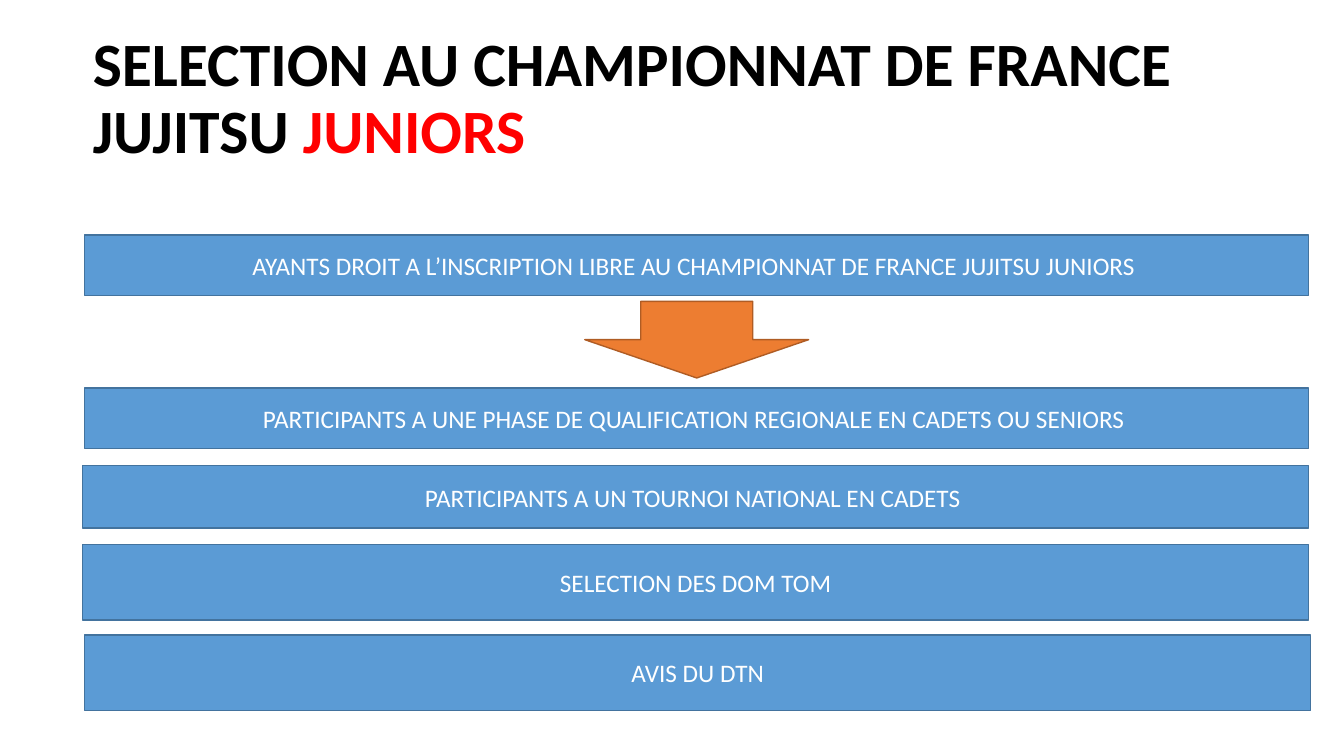
from dataclasses import dataclass

from pptx import Presentation
from pptx.dml.color import RGBColor
from pptx.enum.shapes import MSO_SHAPE
from pptx.enum.text import MSO_ANCHOR, MSO_AUTO_SIZE, PP_ALIGN
from pptx.util import Inches, Pt

RECTANGLE = MSO_SHAPE.RECTANGLE
RIGHT_ARROW = MSO_SHAPE.RIGHT_ARROW
MIDDLE = MSO_ANCHOR.MIDDLE
NO_AUTOFIT = MSO_AUTO_SIZE.NONE
LEFT = PP_ALIGN.LEFT
CENTER = PP_ALIGN.CENTER


@dataclass(frozen=True)
class Theme:
    font: str = "Calibri"
    title_size: int = 44
    bar_size: int = 18
    line_width: int = 1
    black: str = "000000"
    red: str = "FF0000"
    white: str = "FFFFFF"
    blue: str = "5B9BD5"
    blue_line: str = "43739E"
    orange: str = "ED7D31"
    orange_line: str = "AF5C24"


theme = Theme()


def add_block(page, kind, bounds, fill, line):
    block = page.shapes.add_shape(kind, *[Inches(length) for length in bounds])
    block.shadow.inherit = False
    block.fill.solid()
    block.fill.fore_color.rgb = RGBColor.from_string(fill)
    block.line.color.rgb = RGBColor.from_string(line)
    block.line.width = Pt(theme.line_width)
    return block


def style_span(span, size, color, bold=False):
    span.font.name = theme.font
    span.font.size = Pt(size)
    span.font.bold = bold
    span.font.color.rgb = RGBColor.from_string(color)


deck = Presentation()
deck.slide_width = Inches(13.33)
deck.slide_height = Inches(7.5)
page = deck.slides.add_slide(deck.slide_layouts[5])

title = page.shapes.title
title.left, title.top = Inches(0.82), Inches(0.27)
title.width, title.height = Inches(11.5), Inches(1.45)
title.text_frame.auto_size = NO_AUTOFIT
title.text_frame.word_wrap = True
title.text_frame.vertical_anchor = MIDDLE
para = title.text_frame.paragraphs[0]
para.alignment = LEFT
para.line_spacing = 0.9
for text, color in [
    ("SELECTION AU CHAMPIONNAT DE FRANCE JUJITSU ", theme.black),
    ("JUNIORS", theme.red),
]:
    span = para.add_run()
    span.text = text
    style_span(span, theme.title_size, color, bold=True)

bars = [
    ("AYANTS DROIT A L’INSCRIPTION LIBRE AU CHAMPIONNAT DE FRANCE JUJITSU JUNIORS ",
     (0.84, 2.33, 12.14, 0.6)),
    ("PARTICIPANTS A UNE PHASE DE QUALIFICATION REGIONALE EN CADETS OU SENIORS ",
     (0.84, 3.85, 12.14, 0.6)),
    ("PARTICIPANTS A UN TOURNOI NATIONAL EN CADETS ", (0.82, 4.62, 12.16, 0.62)),
    ("SELECTION DES DOM TOM", (0.82, 5.4, 12.16, 0.75)),
    ("AVIS DU DTN", (0.84, 6.3, 12.16, 0.75)),
]
for text, bounds in bars:
    bar = add_block(page, RECTANGLE, bounds, theme.blue, theme.blue_line)
    bar.text_frame.text = text
    bar.text_frame.word_wrap = True
    bar.text_frame.vertical_anchor = MIDDLE
    para = bar.text_frame.paragraphs[0]
    para.alignment = CENTER
    style_span(para.runs[0], theme.bar_size, theme.white)

arrow = add_block(page, RIGHT_ARROW, (6.53, 2.26, 0.76, 2.22), theme.orange, theme.orange_line)
arrow.rotation = 90

deck.save("out.pptx")
